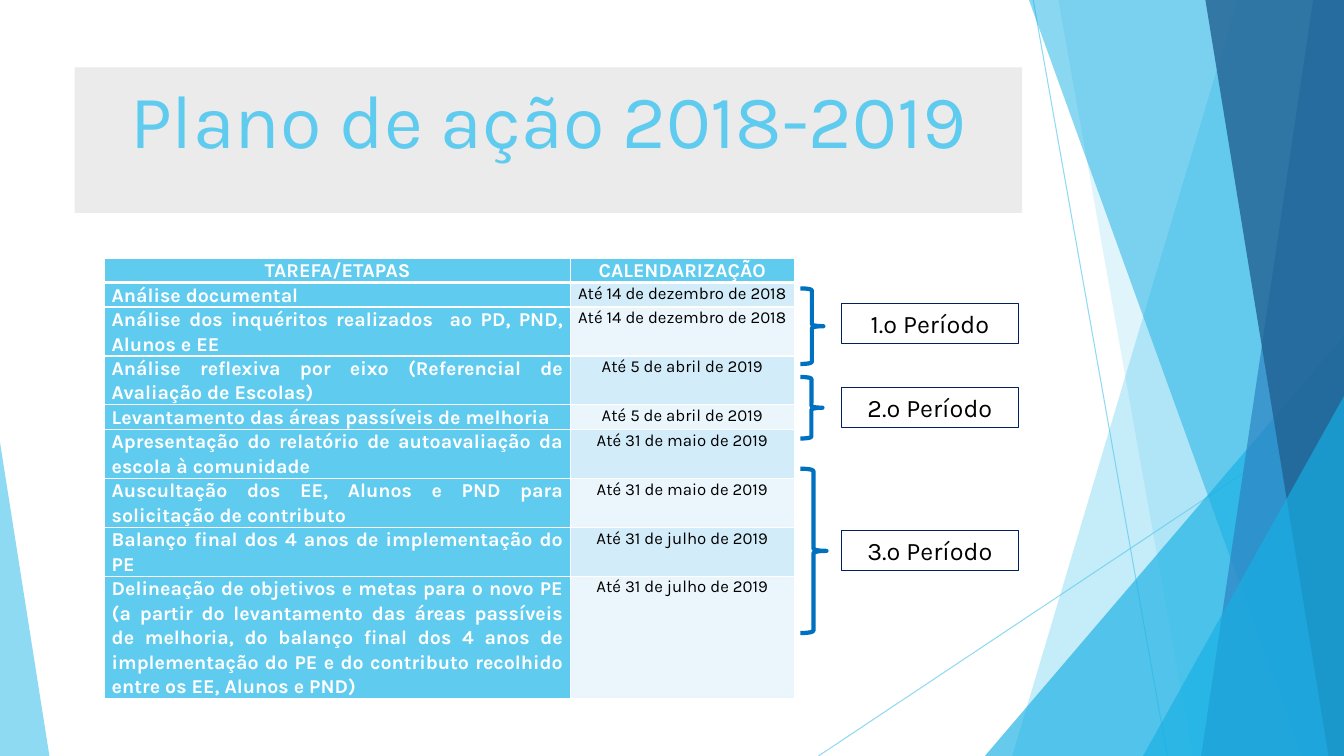
import pptx
import pptx.dml.color
import pptx.enum.shapes
import pptx.enum.text
import pptx.oxml
import pptx.oxml.ns
import pptx.util
from dataclasses import dataclass

Pt = pptx.util.Pt
SHAPE = pptx.enum.shapes.MSO_SHAPE
ALIGN = pptx.enum.text.PP_ALIGN
ANCHOR = pptx.enum.text.MSO_ANCHOR
NAMESPACE = pptx.oxml.ns.nsdecls("a")


@dataclass(frozen=True)
class Theme:
    font: str = "Karla"
    title_size: float = 54
    label_size: float = 18
    task_size: float = 14
    date_size: float = 12
    white: str = "FFFFFF"
    black: str = "000000"
    sky: str = "5FCBEF"
    cyan: str = "17B0E4"
    blue: str = "2E83C3"
    deep: str = "226292"
    panel: str = "EBEBEB"
    bands: tuple = ("D2ECF9", "EAF6FC")
    brace: str = "0070C0"
    frame: str = "002060"


THEME = Theme()
WIDTH, HEIGHT = 960, 540
LINE_HEIGHT = 17.4

# Task, date, lines of text in the row
TASKS = [
    ("Análise documental", "Até 14 de dezembro de 2018", 1),
    ("Análise dos inquéritos realizados  ao PD, PND, Alunos e EE",
     "Até 14 de dezembro de 2018", 2),
    ("Análise reflexiva por eixo (Referencial de Avaliação de Escolas)",
     "Até 5 de abril de 2019", 2),
    ("Levantamento das áreas passíveis de melhoria", "Até 5 de abril de 2019", 1),
    ("Apresentação do relatório de autoavaliação da escola à comunidade",
     "Até 31 de maio de 2019", 2),
    ("Auscultação dos EE, Alunos e PND para solicitação de contributo",
     "Até 31 de maio de 2019", 2),
    ("Balanço final dos 4 anos de implementação do PE", "Até 31 de julho de 2019", 2),
    ("Delineação de objetivos e metas para o novo PE (a partir do levantamento das "
     "áreas passíveis de melhoria, do balanço final dos 4 anos de implementação do PE "
     "e do contributo recolhido entre os EE, Alunos e PND)",
     "Até 31 de julho de 2019", 5),
]

# Label, label top, brace top, brace width, brace height
PERIODS = [
    ("1.º Período", 216.5, 206, 16.5, 54),
    ("2.º Período", 276.5, 269.3, 15.8, 44),
    ("3.º Período", 378.7, 334.8, 18.7, 117.4),
]


def rgb(value):
    return pptx.dml.color.RGBColor.from_string(value)


def set_alpha(fill, percent):
    color = fill._xPr.find(".//" + pptx.oxml.ns.qn("a:srgbClr"))
    color.append(pptx.oxml.parse_xml(f'<a:alpha {NAMESPACE} val="{percent * 1000}"/>'))


def paint(shape, color, alpha):
    shape.shadow.inherit = False
    shape.fill.solid()
    shape.fill.fore_color.rgb = rgb(color)
    set_alpha(shape.fill, alpha)
    shape.line.fill.background()


def add_thin_line(page, start, end):
    line = page.shapes.add_connector(
        pptx.enum.shapes.MSO_CONNECTOR.STRAIGHT, *map(Pt, start + end))
    line.line.width = Pt(0.75)
    line.line.color.rgb = rgb(THEME.sky)
    set_alpha(line.line.fill, 70)
    line._element.spPr.append(pptx.oxml.parse_xml(f"<a:effectLst {NAMESPACE}/>"))


def add_band(page, top_left, bottom_left, color, alpha):
    """Fill from a slanted left edge to the right edge of the page."""
    builder = page.shapes.build_freeform(top_left, 0, scale=Pt(1))
    builder.add_line_segments([(WIDTH, 0), (WIDTH, HEIGHT), (bottom_left, HEIGHT)])
    paint(builder.convert_to_shape(), color, alpha)


def add_corner(page, left, top, width, apex, color, alpha):
    """Triangle standing on the bottom edge; apex 0 is left, 1 is right."""
    corner = page.shapes.add_shape(
        SHAPE.ISOSCELES_TRIANGLE, Pt(left), Pt(top), Pt(width), Pt(HEIGHT - top))
    corner.adjustments[0] = apex
    paint(corner, color, alpha)


def add_decoration(page):
    add_thin_line(page, (738, 0), (833.8, HEIGHT))
    add_thin_line(page, (WIDTH, 290.2), (584.6, HEIGHT))
    add_band(page, 884.2, 722.9, THEME.sky, 36)
    add_band(page, 756, 851.8, THEME.sky, 20)
    add_corner(page, 703.5, 239.8, 256.5, 1, THEME.cyan, 66)
    add_band(page, 735.1, 929.5, THEME.cyan, 50)
    add_band(page, 938.2, 858.2, THEME.blue, 70)
    add_band(page, 861.1, 949, THEME.deep, 80)
    add_corner(page, 816.5, 283, 143.5, 1, THEME.cyan, 66)
    add_corner(page, 0, 316, 35.3, 0, THEME.sky, 70)


def write(frame, text, size, color, align, bold=False):
    para = frame.paragraphs[0]
    para.text = text
    para.alignment = align
    para.font.name = THEME.font
    para.font.size = Pt(size)
    para.font.bold = bold
    para.font.color.rgb = rgb(color)
    return para


def add_title(page, text):
    title = page.shapes.title
    title.left, title.top, title.width, title.height = map(Pt, (53.3, 48.2, 676.8, 103.9))
    title.fill.solid()
    title.fill.fore_color.rgb = rgb(THEME.panel)
    frame = title.text_frame
    frame.auto_size = pptx.enum.text.MSO_AUTO_SIZE.NONE
    frame.vertical_anchor = ANCHOR.TOP
    write(frame, text, THEME.title_size, THEME.sky, ALIGN.CENTER)


def set_borders(cell, top, bottom):
    widths = {"L": 1, "R": 1, "T": top, "B": bottom}
    for side, width in widths.items():
        cell._tc.get_or_add_tcPr().append(pptx.oxml.parse_xml(
            f'<a:ln{side} {NAMESPACE} w="{Pt(width)}"><a:solidFill>'
            f'<a:srgbClr val="{THEME.white}"/></a:solidFill></a:ln{side}>'))


def fill_cell(cell, row, text, size, color, align, fill, bold):
    set_borders(cell, top=3 if row == 1 else 1, bottom=3 if row == 0 else 1)
    cell.fill.solid()
    cell.fill.fore_color.rgb = rgb(fill)
    cell.margin_left = cell.margin_right = Pt(5)
    cell.margin_top = cell.margin_bottom = 0
    cell.vertical_anchor = ANCHOR.TOP
    write(cell.text_frame, text, size, color, align, bold).line_spacing = 1.07


def add_schedule(page):
    rows = [("TAREFA/ETAPAS", "CALENDARIZAÇÃO", 1)] + TASKS
    height = LINE_HEIGHT * sum(lines for _, _, lines in rows)
    table = page.shapes.add_table(
        len(rows), 2, Pt(74.8), Pt(184.3), Pt(492.5), Pt(height)).table
    for column, width in zip(table.columns, (332.6, 159.9)):
        column.width = Pt(width)
    for row, (task, date, lines) in enumerate(rows):
        table.rows[row].height = Pt(LINE_HEIGHT * lines)
        heading = (THEME.task_size, THEME.white)
        fill_cell(table.cell(row, 0), row, task, *heading,
                  ALIGN.JUSTIFY if row else ALIGN.CENTER, THEME.sky, True)
        style = (THEME.date_size, THEME.black) if row else heading
        fill_cell(table.cell(row, 1), row, date, *style, ALIGN.CENTER,
                  THEME.bands[(row - 1) % 2] if row else THEME.sky, row == 0)


def add_outline(page, kind, bounds, color, width):
    shape = page.shapes.add_shape(kind, *map(Pt, bounds))
    shape.shadow.inherit = False
    shape.fill.background()
    shape.line.color.rgb = rgb(color)
    shape.line.width = Pt(width)
    return shape


def add_period(page, label, label_top, brace_top, brace_width, brace_height):
    add_outline(page, SHAPE.RIGHT_BRACE, (571.7, brace_top, brace_width, brace_height),
                THEME.brace, 3)
    box = add_outline(page, SHAPE.RECTANGLE, (601.2, label_top, 126, 29.1),
                      THEME.frame, 0.75)
    box.text_frame.word_wrap = True
    write(box.text_frame, label, THEME.label_size, THEME.black, ALIGN.CENTER)


def main():
    deck = pptx.Presentation()
    deck.slide_width, deck.slide_height = Pt(WIDTH), Pt(HEIGHT)
    page = deck.slides.add_slide(deck.slide_layouts.get_by_name("Title Only"))
    add_decoration(page)
    add_title(page, "Plano de ação 2018-2019")
    add_schedule(page)
    for period in PERIODS:
        add_period(page, *period)
    deck.save("out.pptx")


if __name__ == "__main__":
    main()
